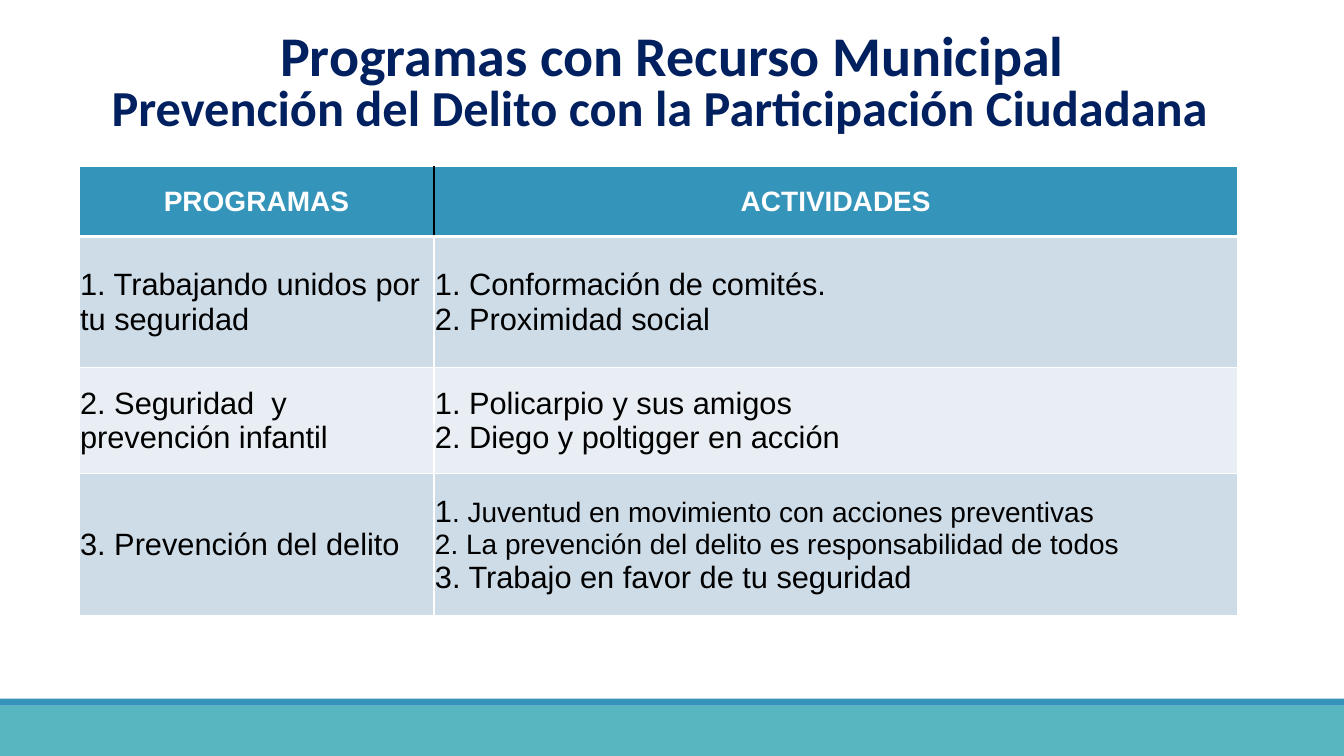
from dataclasses import dataclass

from lxml import etree
from pptx import Presentation
from pptx.dml.color import RGBColor
from pptx.enum.shapes import MSO_SHAPE
from pptx.enum.text import MSO_ANCHOR, PP_ALIGN
from pptx.oxml.ns import qn
from pptx.util import Pt

RECTANGLE = MSO_SHAPE.RECTANGLE
MIDDLE = MSO_ANCHOR.MIDDLE
CENTER, LEFT = PP_ALIGN.CENTER, PP_ALIGN.LEFT


@dataclass(frozen=True)
class Theme:
    navy: str = "002060"
    blue: str = "3494BA"
    teal: str = "58B6C0"
    band_dark: str = "CEDCE7"
    band_light: str = "E8EEF3"
    white: str = "FFFFFF"
    black: str = "000000"
    title_font: str = "Calibri"
    table_font: str = "Arial"
    title_size: int = 40
    subtitle_size: int = 36
    body_size: int = 22
    small_size: int = 20


THEME = Theme()
PAGE_WIDTH, PAGE_HEIGHT = 960, 540
COLUMN_WIDTHS = (253.5, 574)
ROW_HEIGHTS = (50, 93.5, 75.5, 101.5)
HEADINGS = ("PROGRAMAS", "ACTIVIDADES")

# Each cell is a list of paragraphs; each paragraph is a list of (text, size) spans.
BODY, SMALL = THEME.body_size, THEME.small_size
PROGRAMS = (
    (
        [[("1. Trabajando unidos por tu seguridad", BODY)]],
        [[("1. Conformación de comités.", BODY)], [("2. Proximidad social", BODY)]],
    ),
    (
        [[("2. Seguridad  y prevención infantil", BODY)]],
        [[("1. Policarpio y sus amigos", BODY)], [("2. Diego y poltigger en acción", BODY)]],
    ),
    (
        [[("3. Prevención del delito", BODY)]],
        [
            [("1", BODY), (". Juventud en movimiento con acciones preventivas", SMALL)],
            [("2. La prevención del delito es responsabilidad de todos", SMALL)],
            [("3. Trabajo en favor de tu seguridad", BODY)],
        ],
    ),
)


def add_span(para, text, size, font, color, bold=False):
    span = para.add_run()
    span.text = text
    span.font.size = Pt(size)
    span.font.name = font
    span.font.bold = bold
    span.font.color.rgb = RGBColor.from_string(color)


def next_paragraph(frame, index):
    return frame.paragraphs[0] if index == 0 else frame.add_paragraph()


def add_band(page, top, height, color):
    band = page.shapes.add_shape(RECTANGLE, 0, Pt(top), Pt(PAGE_WIDTH), Pt(height))
    band.shadow.inherit = False
    band.fill.solid()
    band.fill.fore_color.rgb = RGBColor.from_string(color)
    band.line.fill.background()


def add_title(page):
    box = page.shapes.add_textbox(0, Pt(24), Pt(PAGE_WIDTH), Pt(80))
    frame = box.text_frame
    frame.word_wrap = True
    lines = (
        ("Programas con Recurso Municipal", THEME.title_size, 0),
        ("Prevención del Delito con la Participación Ciudadana", THEME.subtitle_size, 17),
    )
    for index, (text, size, right_margin) in enumerate(lines):
        para = next_paragraph(frame, index)
        para.alignment = CENTER
        para.line_spacing = Pt(35)
        para._p.get_or_add_pPr().set("marR", str(Pt(right_margin)))
        add_span(para, text, size, THEME.title_font, THEME.navy, bold=True)


def set_borders(cell, left, right, top, bottom):
    """Draw the four edges, each given as (color, width)."""
    properties = cell._tc.get_or_add_tcPr()
    for side, (color, width) in zip("LRTB", (left, right, top, bottom)):
        edge = etree.SubElement(properties, qn(f"a:ln{side}"), w=str(Pt(width)))
        fill = etree.SubElement(edge, qn("a:solidFill"))
        etree.SubElement(fill, qn("a:srgbClr"), val=color)


def fill_cell(cell, color):
    cell.fill.solid()
    cell.fill.fore_color.rgb = RGBColor.from_string(color)
    cell.vertical_anchor = MIDDLE


def add_heading(cell, text, column):
    thin, thick, divider = (THEME.white, 1), (THEME.white, 3), (THEME.black, 1)
    left, right = (thin, divider) if column == 0 else (divider, thin)
    set_borders(cell, left, right, thin, thick)
    fill_cell(cell, THEME.blue)
    para = cell.text_frame.paragraphs[0]
    para.alignment = CENTER
    add_span(para, text, THEME.small_size, THEME.table_font, THEME.white, bold=True)


def add_body(cell, paragraphs, row):
    thin = (THEME.white, 1)
    top = (THEME.white, 3) if row == 1 else thin
    set_borders(cell, thin, thin, top, thin)
    fill_cell(cell, THEME.band_dark if row % 2 else THEME.band_light)
    cell.margin_left = cell.margin_right = cell.margin_top = Pt(0.75)
    cell.margin_bottom = 0
    for index, spans in enumerate(paragraphs):
        para = next_paragraph(cell.text_frame, index)
        para.alignment = LEFT
        for text, size in spans:
            add_span(para, text, size, THEME.table_font, THEME.black)


def add_program_table(page):
    table = page.shapes.add_table(
        len(ROW_HEIGHTS), len(COLUMN_WIDTHS), Pt(56.5), Pt(119),
        Pt(sum(COLUMN_WIDTHS)), Pt(sum(ROW_HEIGHTS)),
    ).table
    for column, width in zip(table.columns, COLUMN_WIDTHS):
        column.width = Pt(width)
    for row, height in zip(table.rows, ROW_HEIGHTS):
        row.height = Pt(height)
    for column, heading in enumerate(HEADINGS):
        add_heading(table.cell(0, column), heading, column)
    for row, program in enumerate(PROGRAMS, start=1):
        for column, paragraphs in enumerate(program):
            add_body(table.cell(row, column), paragraphs, row)


def main():
    deck = Presentation()
    deck.slide_width, deck.slide_height = Pt(PAGE_WIDTH), Pt(PAGE_HEIGHT)
    page = deck.slides.add_slide(deck.slide_layouts[6])
    add_band(page, 504, 36, THEME.teal)
    add_band(page, 499, 5, THEME.blue)
    add_title(page)
    add_program_table(page)
    deck.save("out.pptx")


if __name__ == "__main__":
    main()
